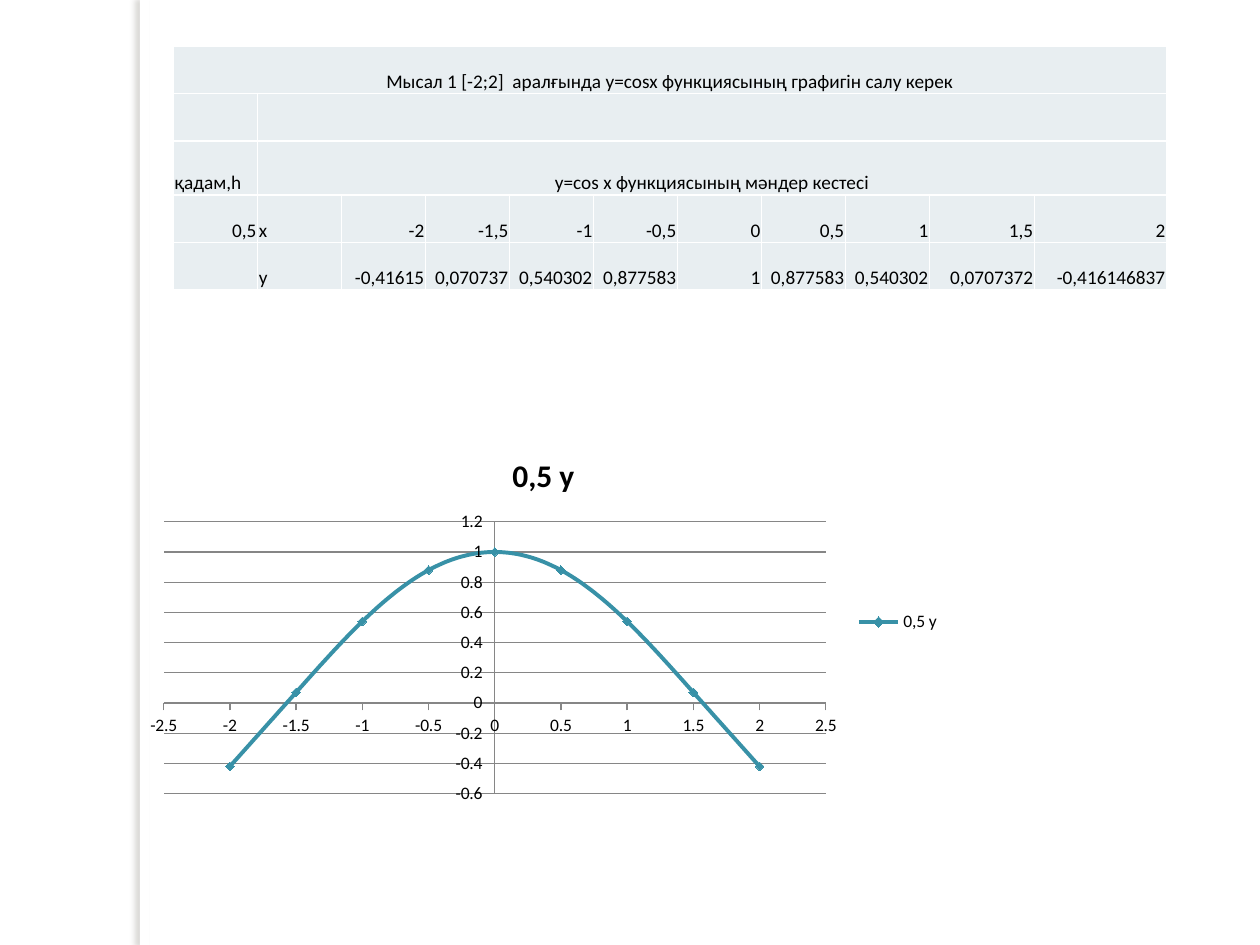
from lxml.etree import SubElement
from pptx import Presentation
from pptx.chart.data import XyChartData
from pptx.dml.color import RGBColor
from pptx.enum.chart import XL_CHART_TYPE as ChartType, XL_LEGEND_POSITION as LegendPosition
from pptx.enum.chart import XL_MARKER_STYLE as MarkerStyle, XL_TICK_MARK as TickMark
from pptx.enum.shapes import MSO_SHAPE as Shape
from pptx.enum.text import MSO_ANCHOR as Anchor, PP_ALIGN as Align
from pptx.oxml import parse_xml
from pptx.oxml.ns import nsdecls, qn
from pptx.util import Pt

BLACK = RGBColor(0, 0, 0)
WHITE = RGBColor(0xFF, 0xFF, 0xFF)
CELL_GREY = RGBColor(0xE8, 0xEE, 0xF1)
AXIS_GREY = RGBColor(0x86, 0x86, 0x86)
CURVE_TEAL = RGBColor(0x38, 0x91, 0xA7)
STRIP_SHADOW = RGBColor(0x73, 0x6F, 0x63)
FONT = "Calibri"

HEADING = "Мысал 1 [-2;2]  аралғында y=cosx функциясының графигін салу керек"
VALUES_HEADING = "y=cos x функциясының мәндер кестесі"
X_VALUES = ["-2", "-1,5", "-1", "-0,5", "0", "0,5", "1", "1,5", "2"]
Y_VALUES = ["-0,41615", "0,070737", "0,540302", "0,877583", "1",
            "0,877583", "0,540302", "0,0707372", "-0,416146837"]
COLUMN_WIDTHS = [48] * 9 + [60, 75.5]
ROW_HEIGHTS = [27, 27, 31, 27, 27]


def style_font(font, size, bold=False):
    """Set the common typeface and colour at the given size."""
    font.name, font.size, font.bold = FONT, Pt(size), bold
    font.color.rgb = BLACK


def add_side_strip(slide):
    """Add the white vertical strip that casts a shadow to the left."""
    strip = slide.shapes.add_shape(Shape.RECTANGLE, Pt(80), Pt(0), Pt(5.5), Pt(540))
    strip.fill.solid()
    strip.fill.fore_color.rgb = WHITE
    strip.line.fill.background()
    strip.shadow.inherit = False
    effects = strip._element.spPr.find(qn("a:effectLst"))
    shadow = SubElement(effects, qn("a:outerShdw"), blurRad=str(Pt(3)), dist=str(Pt(3)),
                        dir="10800000", rotWithShape="0")
    colour = SubElement(shadow, qn("a:srgbClr"), val=str(STRIP_SHADOW))
    SubElement(colour, qn("a:alpha"), val="25000")


def style_cell(cell):
    """Give a cell its fill, tight margins and white borders."""
    cell.fill.solid()
    cell.fill.fore_color.rgb = CELL_GREY
    cell.vertical_anchor = Anchor.BOTTOM
    cell.margin_left = cell.margin_right = cell.margin_top = Pt(0.7)
    cell.margin_bottom = Pt(0)
    properties = cell._tc.get_or_add_tcPr()
    for position, side in enumerate(("lnL", "lnR", "lnT", "lnB")):
        properties.insert(position, parse_xml(
            f'<a:{side} {nsdecls("a")} w="{Pt(1)}"><a:solidFill>'
            f'<a:srgbClr val="{WHITE}"/></a:solidFill></a:{side}>'))


def write_cell(cell, text, align):
    """Write one aligned line of text into a cell."""
    paragraph = cell.text_frame.paragraphs[0]
    paragraph.text = text
    paragraph.alignment = align
    style_font(paragraph.runs[0].font, 11)


def add_values_table(slide):
    """Add the table with the step, the arguments and the cosines."""
    last = len(COLUMN_WIDTHS) - 1
    table = slide.shapes.add_table(
        len(ROW_HEIGHTS), len(COLUMN_WIDTHS), Pt(99.2), Pt(26.5),
        Pt(sum(COLUMN_WIDTHS)), Pt(sum(ROW_HEIGHTS))).table
    for column, width in zip(table.columns, COLUMN_WIDTHS):
        column.width = Pt(width)
    for row, height in zip(table.rows, ROW_HEIGHTS):
        row.height = Pt(height)
    for cell in table.iter_cells():
        style_cell(cell)
    for row, first in enumerate((0, 1, 1)):
        table.cell(row, first).merge(table.cell(row, last))
    write_cell(table.cell(0, 0), HEADING, Align.CENTER)
    write_cell(table.cell(2, 0), "қадам,h", Align.LEFT)
    write_cell(table.cell(2, 1), VALUES_HEADING, Align.CENTER)
    write_cell(table.cell(3, 0), "0,5", Align.RIGHT)
    for row, label, values in ((3, "х", X_VALUES), (4, "y", Y_VALUES)):
        write_cell(table.cell(row, 1), label, Align.LEFT)
        for column, value in enumerate(values, start=2):
            write_cell(table.cell(row, column), value, Align.RIGHT)


def to_number(text):
    """Turn a decimal-comma string into a number with two decimals."""
    return round(float(text.replace(",", ".")), 2)


def style_axis(axis, has_gridlines):
    """Set the ticks, line and gridlines of an axis."""
    axis.major_tick_mark, axis.minor_tick_mark = TickMark.OUTSIDE, TickMark.NONE
    axis.tick_labels.number_format = "General"
    axis.tick_labels.number_format_is_linked = False
    lines = [axis.format.line]
    axis.has_major_gridlines = has_gridlines
    if has_gridlines:
        lines.append(axis.major_gridlines.format.line)
    for line in lines:
        line.color.rgb, line.width = AXIS_GREY, Pt(0.75)


def style_curve(curve):
    """Draw the series as a smooth line with diamond markers."""
    curve._element.find(qn("c:smooth")).set("val", "1")
    curve.format.line.color.rgb = CURVE_TEAL
    curve.format.line.width = Pt(2.25)
    curve.marker.style, curve.marker.size = MarkerStyle.DIAMOND, 5
    curve.marker.format.fill.solid()
    curve.marker.format.fill.fore_color.rgb = CURVE_TEAL
    curve.marker.format.line.color.rgb = CURVE_TEAL


def add_cosine_chart(slide):
    """Add the smooth scatter chart of the cosine."""
    points = XyChartData()
    cosine = points.add_series("0,5 y")
    for x, y in zip(X_VALUES, Y_VALUES):
        cosine.add_data_point(to_number(x), to_number(y))
    chart = slide.shapes.add_chart(ChartType.XY_SCATTER_SMOOTH, Pt(76.5), Pt(247.5),
                                   Pt(468), Pt(216), points).chart
    style_font(chart.font, 10)
    chart.has_title = True
    title = chart.chart_title.text_frame
    title.text = "0,5 y"
    style_font(title.paragraphs[0].runs[0].font, 18, bold=True)
    chart.has_legend = True
    chart.legend.position = LegendPosition.RIGHT
    chart.legend.include_in_layout = False
    style_axis(chart.category_axis, False)
    style_axis(chart.value_axis, True)
    chart.plots[0].vary_by_categories = False
    style_curve(chart.plots[0].series[0])


def main():
    """Build the slide and save the presentation."""
    presentation = Presentation()
    presentation.slide_width, presentation.slide_height = Pt(720), Pt(540)
    slide = presentation.slides.add_slide(presentation.slide_layouts[6])
    add_side_strip(slide)
    add_values_table(slide)
    add_cosine_chart(slide)
    presentation.save("out.pptx")


if __name__ == "__main__":
    main()
